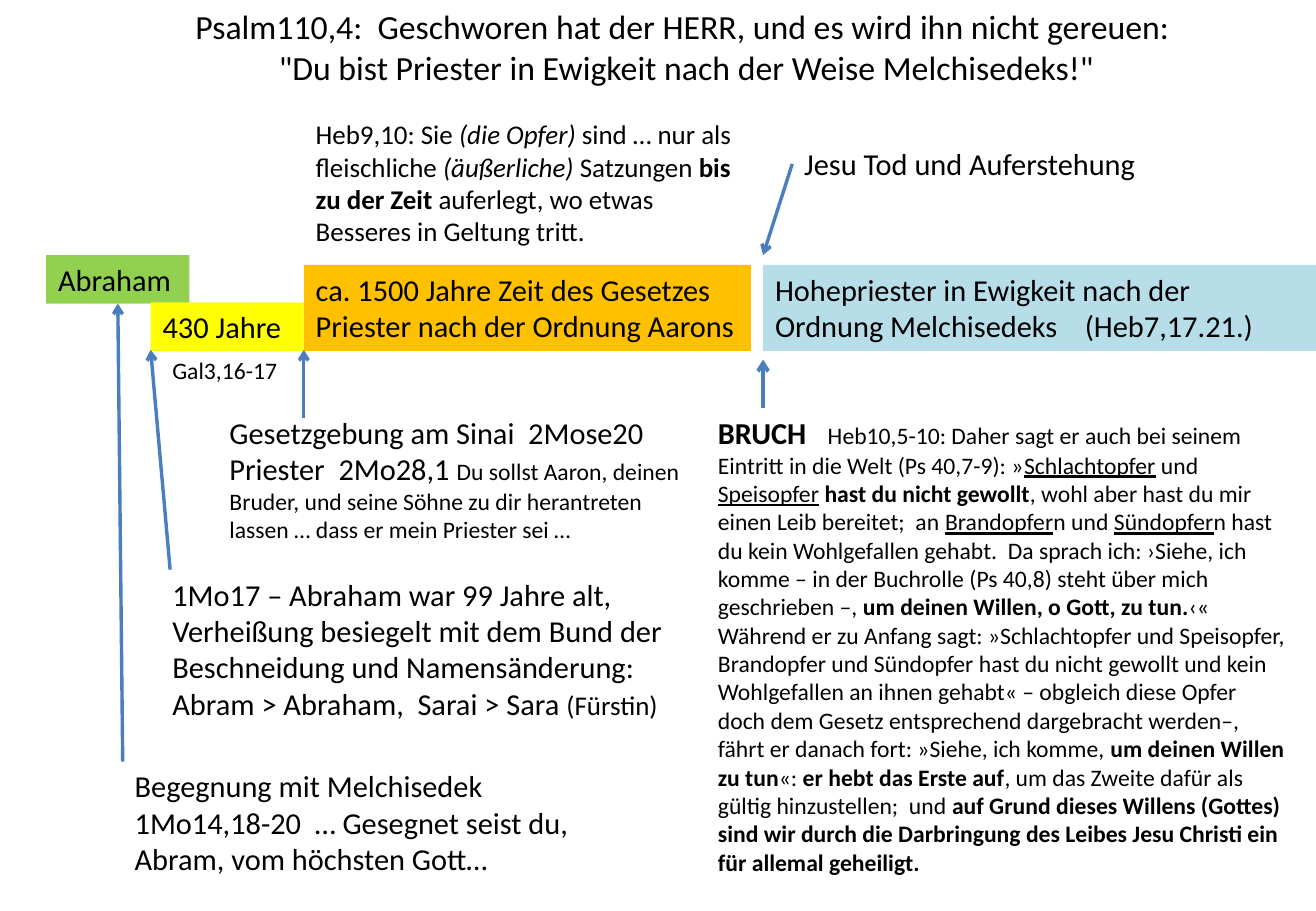
"""Builds a timeline slide on the priesthood after the order of Melchizedek."""
from dataclasses import dataclass

from lxml import etree
from pptx import Presentation
from pptx import util as u
from pptx.dml.color import RGBColor
from pptx.enum import shapes, text
from pptx.oxml.ns import qn


@dataclass(frozen=True)
class Theme:
    font: str = "Calibri"
    ink: str = "000000"
    arrow: str = "4B7EBC"
    green: str = "92D050"
    yellow: str = "FFFF00"
    orange: str = "FFC000"
    blue: str = "B7DEE8"
    title: int = 20
    body: int = 18
    quote: int = 16
    small: int = 14


T = Theme()
PX = 9144
SLIDE = (1083, 750)

TITLE_AT = (124, 0, 882, 77)
TITLE = [
    [("Psalm110,4:  Geschworen hat der HERR, und es wird ihn nicht gereuen: ", T.title)],
    [('"Du bist Priester in Ewigkeit nach der Weise Melchisedeks!"', T.title)],
]

ERAS = {
    "abraham": ((38, 210, 118, 40), T.green, True, [[("Abraham", T.body)]]),
    "waiting": ((124, 249, 126, 40), T.yellow, True, [[("430 Jahre", T.body)]]),
    "law": ((250, 218, 368, 71), T.orange, False, [
        [("ca. 1500 Jahre Zeit des Gesetzes", T.body)],
        [("Priester nach der Ordnung Aarons", T.body)],
    ]),
    "eternity": ((628, 218, 455, 71), T.blue, True, [
        [("Hohepriester in Ewigkeit nach der Ordnung Melchisedeks    (Heb7,17.21.)", T.body)],
    ]),
}

NOTES = {
    "meeting": ((101, 627, 378, 101), None, True, [
        [("Begegnung mit Melchisedek 1Mo14,18-20  … Gesegnet seist du, "
          "Abram, vom höchsten Gott…", T.body)],
    ]),
    "covenant": ((132, 469, 425, 131), None, True, [
        [("1Mo17 – Abraham war 99 Jahre alt, Verheißung besiegelt mit dem Bund der "
          "Beschneidung und Namensänderung:", T.body)],
        [("Abram > Abraham,  Sarai > Sara ", T.body), ("(Fürstin)", T.quote)],
    ]),
    "sinai": ((179, 336, 394, 148), None, True, [
        [("Gesetzgebung am Sinai  2Mose20 Priester  2Mo28,1 ", T.body),
         ("Du sollst Aaron, deinen Bruder, und seine Söhne zu dir herantreten "
          "lassen … dass er mein Priester sei …", T.small)],
    ]),
    "offerings": ((250, 92, 362, 118), None, True, [
        [("Heb9,10: Sie ", T.quote), ("(die Opfer) ", T.quote, "i"),
         ("sind … nur als fleischliche ", T.quote), ("(äußerliche) ", T.quote, "i"),
         ("Satzungen ", T.quote), ("bis zu der Zeit", T.quote, "b"),
         (" auferlegt, wo etwas Besseres in Geltung tritt.", T.quote)],
    ]),
    "break": ((581, 336, 487, 424), None, True, [
        [("BRUCH", T.body, "b"),
         ("    Heb10,5-10: Daher sagt er auch bei seinem Eintritt in die Welt (Ps 40,7-9): »",
          T.small),
         ("Schlachtopfer", T.small, "u"), (" und ", T.small),
         ("Speisopfer", T.small, "u"), (" ", T.small),
         ("hast du nicht gewollt", T.small, "b"),
         (", wohl aber hast du mir einen Leib bereitet;  an ", T.small),
         ("Brandopfer", T.small, "u"), ("n und ", T.small),
         ("Sündopfer", T.small, "u"),
         ("n hast du kein Wohlgefallen gehabt.  Da sprach ich: ›Siehe, ich komme – "
          "in der Buchrolle (Ps 40,8) steht über mich geschrieben –, ", T.small),
         ("um deinen Willen, o Gott, zu tun.", T.small, "b"), ("‹«", T.small)],
        [("Während er zu Anfang sagt: »Schlachtopfer und Speisopfer, Brandopfer und "
          "Sündopfer hast du nicht gewollt und kein Wohlgefallen an ihnen gehabt« – "
          "obgleich diese Opfer doch dem Gesetz entsprechend dargebracht werden–,", T.small)],
        [("fährt er danach fort: »Siehe, ich komme, ", T.small),
         ("um deinen Willen zu tun", T.small, "b"), ("«: ", T.small),
         ("er hebt das Erste auf", T.small, "b"),
         (", um das Zweite dafür als gültig hinzustellen;  und ", T.small),
         ("auf Grund dieses Willens (Gottes) sind wir durch die Darbringung des Leibes "
          "Jesu Christi ein für allemal geheiligt.", T.small, "b")],
    ]),
    "cross": ((652, 115, 296, 40), None, False, [[("Jesu Tod und Auferstehung", T.body)]]),
    "galatians": ((132, 288, 107, 34), None, False, [[("Gal3,16-17", T.small)]]),
}

TOP, LEFT, BOTTOM, RIGHT = range(4)
ARROWS = [
    ((101, 627), (97, 250), 2, None, ("abraham", BOTTOM)),
    ((140, 469), (124, 288), 2, None, None),
    ((250, 344), (250, 288), 2, None, None),
    ((652, 135), (628, 210), 2, ("cross", LEFT), None),
    ((628, 336), (628, 296), 2.25, None, None),
]


def px(values):
    return [v * PX for v in values]


def write(tf, paragraphs, align=text.PP_ALIGN.LEFT):
    tf.vertical_anchor = text.MSO_ANCHOR.TOP
    for i, runs in enumerate(paragraphs):
        p = tf.paragraphs[0] if i == 0 else tf.add_paragraph()
        p.alignment = align
        p.line_spacing = 1.0
        p.space_before = u.Pt(0)
        for words, size, *style in runs:
            r = p.add_run()
            r.text = words
            r.font.name = T.font
            r.font.size = u.Pt(size)
            r.font.color.rgb = RGBColor.from_string(T.ink)
            r.font.bold = "b" in style
            r.font.italic = "i" in style
            r.font.underline = "u" in style


def add_box(s, at, fill, wrap, paragraphs):
    if fill:
        sp = s.shapes.add_shape(shapes.MSO_SHAPE.RECTANGLE, *px(at))
        sp.shadow.inherit = False
        sp.fill.solid()
        sp.fill.fore_color.rgb = RGBColor.from_string(fill)
        sp.line.fill.background()
    else:
        sp = s.shapes.add_textbox(*px(at))
    tf = sp.text_frame
    tf.word_wrap = wrap
    tf.auto_size = text.MSO_AUTO_SIZE.SHAPE_TO_FIT_TEXT
    write(tf, paragraphs)
    return sp


def add_arrow(s, boxes, start, end, width, begin_at, end_at):
    cx = s.shapes.add_connector(shapes.MSO_CONNECTOR.STRAIGHT, *px(start + end))
    cx.line.color.rgb = RGBColor.from_string(T.arrow)
    cx.line.width = u.Pt(width)
    if begin_at:
        cx.begin_connect(boxes[begin_at[0]], begin_at[1])
    if end_at:
        cx.end_connect(boxes[end_at[0]], end_at[1])
    etree.SubElement(cx.line._get_or_add_ln(), qn("a:tailEnd"), type="arrow")
    etree.SubElement(cx._element.spPr, qn("a:effectLst"))


def main():
    prs = Presentation()
    prs.slide_width, prs.slide_height = px(SLIDE)
    s = prs.slides.add_slide(prs.slide_layouts[5])
    title = s.shapes.title
    title.left, title.top, title.width, title.height = px(TITLE_AT)
    title.text_frame.auto_size = text.MSO_AUTO_SIZE.NONE
    write(title.text_frame, TITLE, text.PP_ALIGN.CENTER)
    boxes = {name: add_box(s, *box) for name, box in (ERAS | NOTES).items()}
    for arrow in ARROWS:
        add_arrow(s, boxes, *arrow)
    prs.save("out.pptx")


if __name__ == "__main__":
    main()
